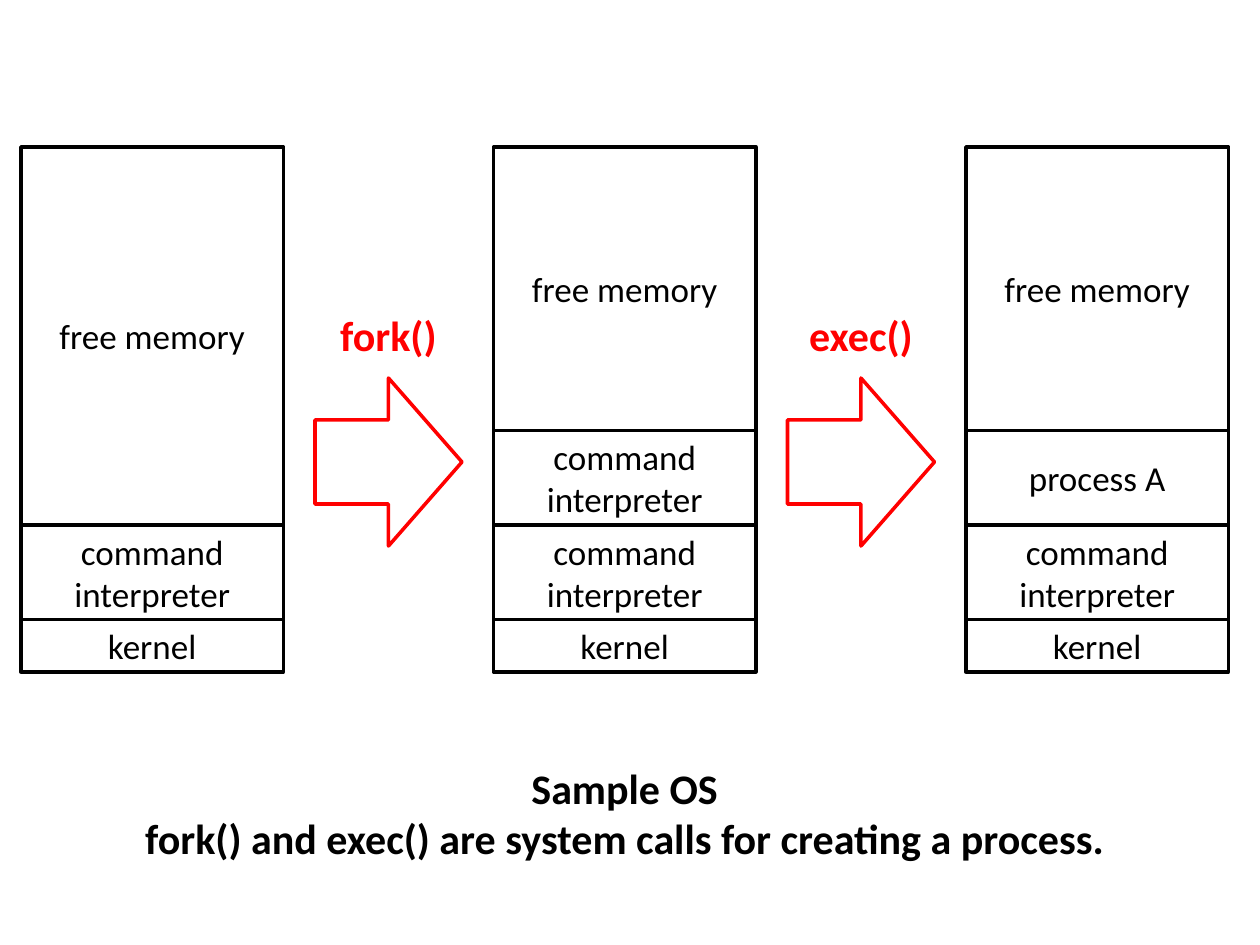
import pptx
import pptx.dml.color
import pptx.enum.shapes
import pptx.enum.text
import pptx.util

Pt = pptx.util.Pt
RGBColor = pptx.dml.color.RGBColor
MSO_SHAPE = pptx.enum.shapes.MSO_SHAPE
MSO_ANCHOR = pptx.enum.text.MSO_ANCHOR
MSO_AUTO_SIZE = pptx.enum.text.MSO_AUTO_SIZE
PP_ALIGN = pptx.enum.text.PP_ALIGN

BLACK = RGBColor(0, 0, 0)
RED = RGBColor(255, 0, 0)

COLUMN_LEFT = 12
COLUMN_WIDTH = 150
COLUMN_GAP = 120
COLUMN_TOP = 84
ARROW_WIDTH = 84
ARROW_HEIGHT = 96

KERNEL = (["kernel"], 30)
INTERPRETER = (["command", "interpreter"], 54)
PROCESS = (["process A"], 54)
MEMORY_STATES = [
    [(["free memory"], 216), INTERPRETER, KERNEL],
    [(["free memory"], 162), INTERPRETER, INTERPRETER, KERNEL],
    [(["free memory"], 162), PROCESS, INTERPRETER, KERNEL],
]
SYSTEM_CALLS = ["fork()", "exec()"]
CAPTION = [
    "Sample OS",
    "fork() and exec() are system calls for creating a process.",
]


class Diagram:
    """Draws elements on the current page in one style; lengths are in points."""

    font_name = "Calibri"
    line_width = 2
    block_size = 20
    label_size = 24

    def __init__(self, page):
        self.page = page

    def set_text(self, frame, lines, size, color, bold=False):
        frame.word_wrap = True
        for index, line in enumerate(lines):
            para = frame.paragraphs[0] if index == 0 else frame.add_paragraph()
            para.text = line
            para.alignment = PP_ALIGN.CENTER
            para.font.name = self.font_name
            para.font.size = Pt(size)
            para.font.bold = bold
            para.font.color.rgb = color

    def outline(self, kind, left, top, width, height, color):
        """Add an unfilled preset shape with a coloured border."""
        shape = self.page.shapes.add_shape(
            kind, Pt(left), Pt(top), Pt(width), Pt(height))
        shape.shadow.inherit = False
        shape.fill.background()
        shape.line.color.rgb = color
        shape.line.width = Pt(self.line_width)
        return shape

    def block(self, left, top, width, height, lines):
        box = self.outline(MSO_SHAPE.RECTANGLE, left, top, width, height, BLACK)
        box.text_frame.vertical_anchor = MSO_ANCHOR.MIDDLE
        self.set_text(box.text_frame, lines, self.block_size, BLACK)

    def memory_column(self, left, top, blocks):
        for lines, height in blocks:
            self.block(left, top, COLUMN_WIDTH, height, lines)
            top += height

    def arrow(self, left, top):
        self.outline(MSO_SHAPE.RIGHT_ARROW, left, top,
                     ARROW_WIDTH, ARROW_HEIGHT, RED)

    def label(self, left, top, width, height, lines, color):
        box = self.page.shapes.add_textbox(
            Pt(left), Pt(top), Pt(width), Pt(height))
        self.set_text(box.text_frame, lines, self.label_size, color, bold=True)
        box.text_frame.auto_size = MSO_AUTO_SIZE.SHAPE_TO_FIT_TEXT


def main():
    deck = pptx.Presentation()
    deck.slide_width = Pt(720)
    deck.slide_height = Pt(540)
    blank_layout = deck.slide_layouts[6]
    diagram = Diagram(deck.slides.add_slide(blank_layout))

    pitch = COLUMN_WIDTH + COLUMN_GAP
    for index, blocks in enumerate(MEMORY_STATES):
        diagram.memory_column(COLUMN_LEFT + index * pitch, COLUMN_TOP, blocks)

    for index, call in enumerate(SYSTEM_CALLS):
        gap_left = COLUMN_LEFT + COLUMN_WIDTH + index * pitch
        diagram.arrow(gap_left + (COLUMN_GAP - ARROW_WIDTH) / 2, 216)
        diagram.label(gap_left, 173.5, COLUMN_GAP, 36, [call], RED)

    caption_width = 2 * pitch + COLUMN_WIDTH
    diagram.label(COLUMN_LEFT, 432, caption_width, 65.5, CAPTION, BLACK)

    deck.save("out.pptx")


if __name__ == "__main__":
    main()
